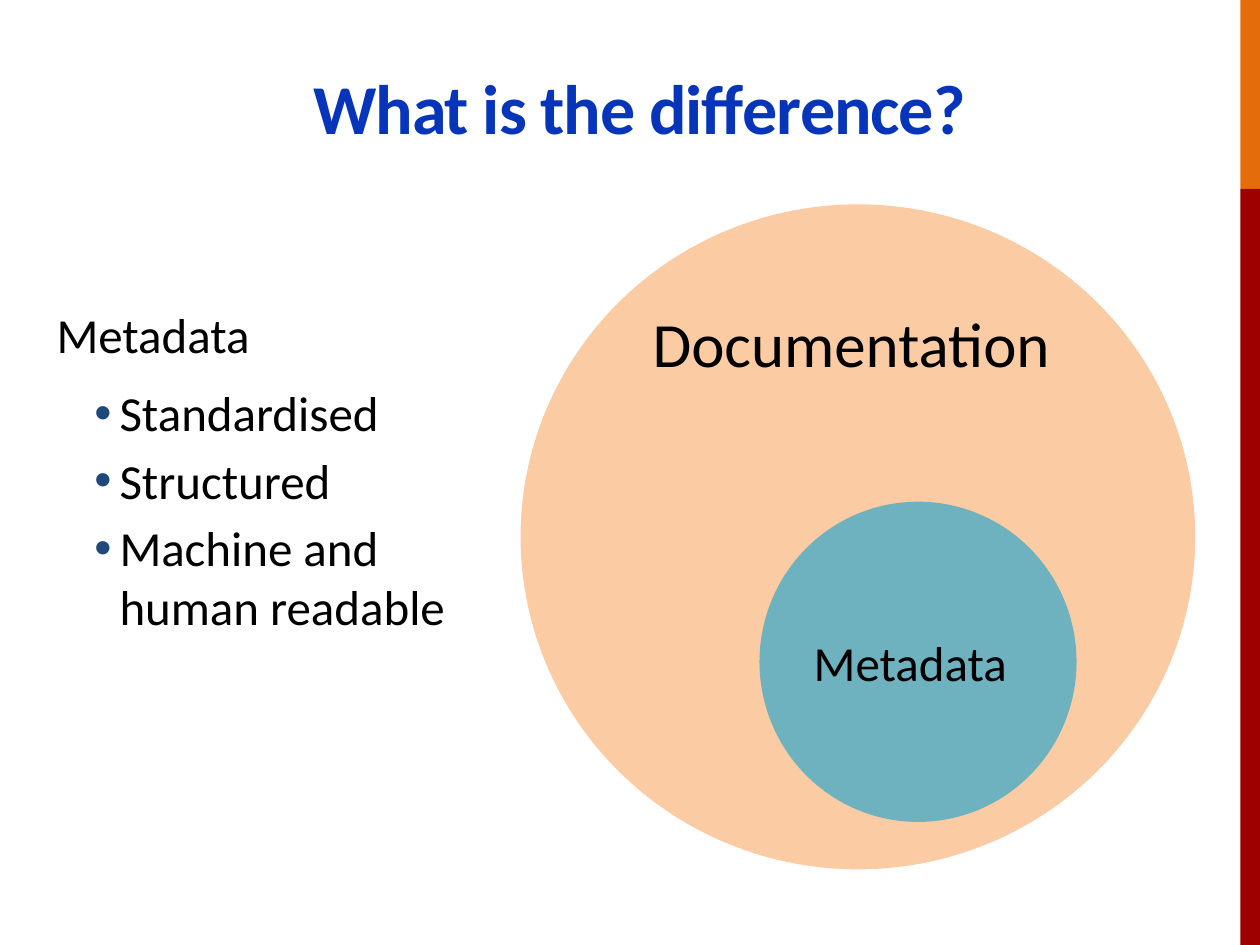
from lxml.etree import SubElement
from pptx import Presentation
from pptx.dml.color import RGBColor
from pptx.enum.shapes import MSO_SHAPE
from pptx.enum.text import MSO_ANCHOR, PP_ALIGN
from pptx.oxml.ns import qn
from pptx.util import Pt

ORANGE = RGBColor(0xE4, 0x6C, 0x0A)
RED = RGBColor(0x9E, 0x00, 0x00)
BLUE = RGBColor(0x06, 0x35, 0xBA)
PEACH = RGBColor(0xF7, 0x96, 0x46)
TEAL = RGBColor(0x4B, 0xAC, 0xC6)
NAVY = RGBColor(0x1F, 0x49, 0x7D)
BLACK = RGBColor(0x00, 0x00, 0x00)


def add_text(left, top, width, height, lines, size, color=BLACK, wrap=True):
    box = page.shapes.add_textbox(Pt(left), Pt(top), Pt(width), Pt(height))
    frame = box.text_frame
    frame.word_wrap = wrap
    for index, line in enumerate(lines):
        para = frame.add_paragraph() if index else frame.paragraphs[0]
        span = para.add_run()
        span.text = line
        span.font.name = "Calibri"
        span.font.size = Pt(size)
        span.font.color.rgb = color
    return frame


deck = Presentation()
deck.slide_width, deck.slide_height = Pt(720), Pt(540)
page = deck.slides.add_slide(deck.slide_layouts[6])

for kind, left, top, width, height, color, opacity in [
    (MSO_SHAPE.RECTANGLE, 708.75, 0, 11.25, 108, ORANGE, 100),
    (MSO_SHAPE.RECTANGLE, 708.75, 108, 11.25, 432, RED, 100),
    (MSO_SHAPE.OVAL, 297.5, 116.8, 385.5, 380, PEACH, 49),
    (MSO_SHAPE.OVAL, 434, 286.7, 181.2, 183, TEAL, 80),
]:
    shape = page.shapes.add_shape(kind, Pt(left), Pt(top), Pt(width), Pt(height))
    shape.shadow.inherit = False
    shape.line.fill.background()
    shape.fill.solid()
    shape.fill.fore_color.rgb = color
    if opacity < 100:
        tint = shape.fill._xPr.find(".//" + qn("a:srgbClr"))
        SubElement(tint, qn("a:alpha"), val=str(opacity * 1000))

title = add_text(36, 34.5, 658.8, 54, ["What is the difference?"], 40, BLUE)
title.vertical_anchor = MSO_ANCHOR.BOTTOM
title.paragraphs[0].alignment = PP_ALIGN.CENTER
title_font = title.paragraphs[0].runs[0].font
title_font.bold = True
title_font._element.set("spc", "-60")

body = add_text(25.2, 170.6, 238.3, 283.7,
                ["Metadata", "Standardised", "Structured", "Machine and human readable"], 28)
heading, *bullets = body.paragraphs
heading.space_before = Pt(5)
heading.space_after = Pt(6)
for para in bullets:
    para.level = 1
    para.space_before = Pt(5)
    props = para._p.get_or_add_pPr()
    props.set("marL", str(Pt(36)))
    props.set("indent", str(Pt(-14.4)))
    bullet_color = SubElement(props, qn("a:buClr"))
    SubElement(bullet_color, qn("a:srgbClr"), val=str(NAVY))
    SubElement(props, qn("a:buFont"), typeface="Arial")
    SubElement(props, qn("a:buChar"), char="•")

add_text(457.9, 357.8, 133.2, 41, ["Metadata"], 28, wrap=False)
add_text(365.8, 170.6, 249.1, 51, ["Documentation"], 36, wrap=False)

deck.save("out.pptx")
